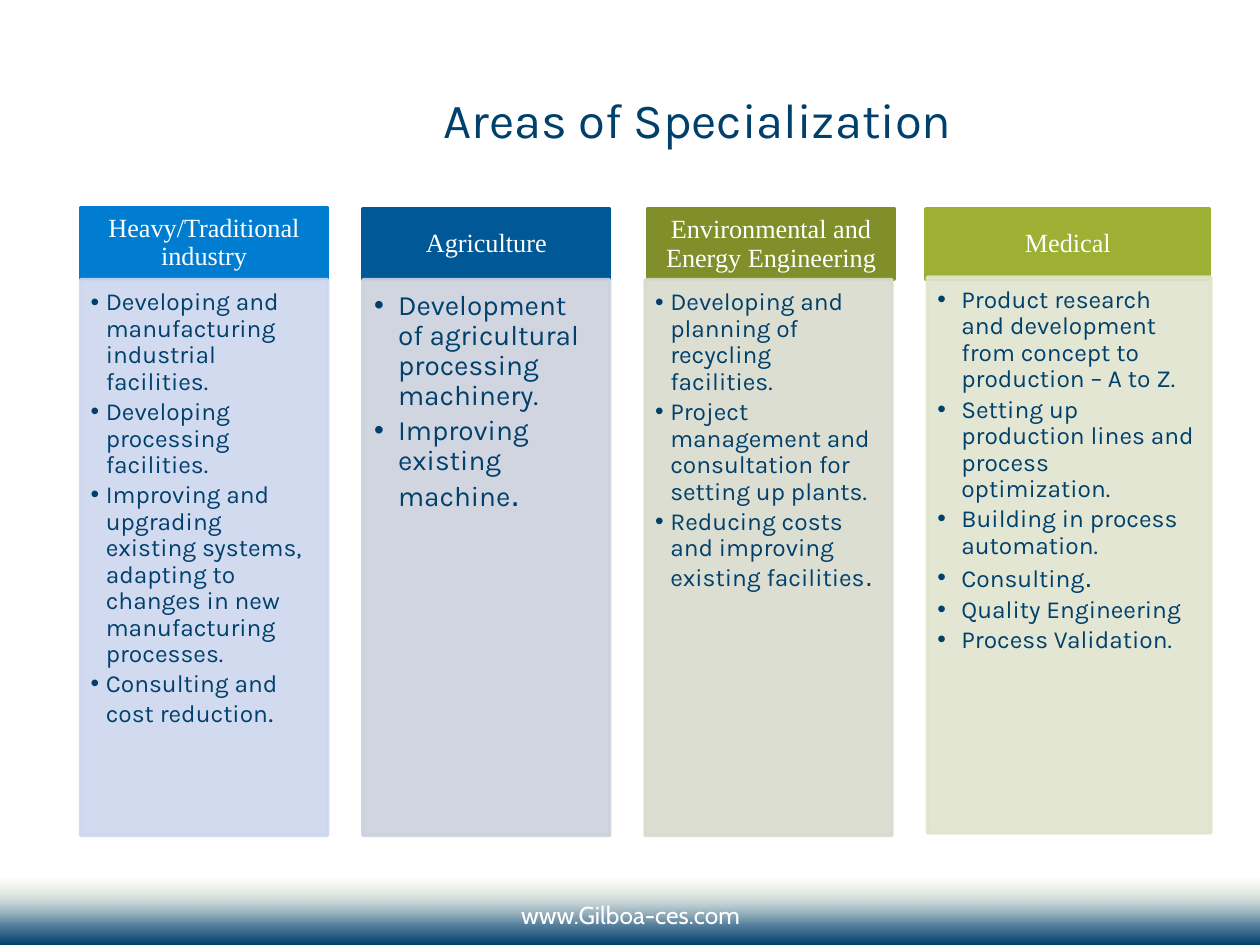
from pptx import Presentation
from pptx.dml.color import RGBColor
from pptx.enum.shapes import MSO_SHAPE
from pptx.enum.text import MSO_ANCHOR, PP_ALIGN
from pptx.oxml import parse_xml
from pptx.oxml.ns import nsdecls, qn
from pptx.util import Inches, Pt
from lxml.etree import SubElement

COLORS = {
    "navy": "00406C", "white": "FFFFFF", "footer": "00406D", "haze": "CBD5AF",
    "blue": "007CD0", "blue_tint": "CCD7EE",
    "deep": "005996", "deep_tint": "CCD1DD",
    "olive": "808F29", "olive_tint": "D8DBCD",
    "lime": "9DB033", "lime_tint": "DFE4CE",
}

# title, colour, header left and top, body left and top, width, text size, indent, bullets, final stop (size, font)
COLUMNS = [
    ("Medical", "lime", (7.35, 1.66), (7.36, 2.2), 2.25, 14, 0.19, [
        "Product research and development from concept to production – A to Z.",
        "Setting up production lines and process optimization.",
        "Building in process automation.",
        ("Consulting", 16, "Arial"),
        "Quality Engineering",
        "Process Validation."]),
    ("Environmental and Energy Engineering", "olive", (5.14, 1.66), (5.12, 2.22), 1.96, 14, 0.12, [
        "Developing and planning of recycling facilities.",
        "Project management and consultation for setting up plants.",
        ("Reducing costs and improving existing facilities", 16, "Arial")]),
    ("Agriculture", "deep", (2.88, 1.66), (2.88, 2.22), 1.96, 16, 0.19, [
        "Development of agricultural processing machinery.",
        ("Improving existing machine", 20, "Arial")]),
    ("Heavy/Traditional industry", "blue", (0.64, 1.65), (0.64, 2.22), 1.96, 14, 0.12, [
        "Developing and manufacturing industrial facilities.",
        "Developing processing facilities.",
        "Improving and upgrading existing systems, adapting to changes in new manufacturing processes.",
        ("Consulting and cost reduction", 16, "Karla")]),
]


def rgb(name):
    return RGBColor.from_string(COLORS[name])


def add_run(p, text, size=14, font="Karla", color="navy"):
    r = p.add_run()
    r.text = text
    r.font.size = Pt(size)
    r.font.name = font
    r.font.color.rgb = rgb(color)


class Deck:
    def __init__(self, prs):
        self.s = prs.slides.add_slide(prs.slide_layouts[6])

    def frame(self, sp, anchor=MSO_ANCHOR.TOP, insets=(0.1, 0.05, 0.1, 0.05)):
        tf = sp.text_frame
        tf.word_wrap = True
        tf.vertical_anchor = anchor
        tf.margin_left, tf.margin_top, tf.margin_right, tf.margin_bottom = map(Inches, insets)
        return tf

    def text(self, at, text, anchor=MSO_ANCHOR.TOP, align=PP_ALIGN.LEFT, **fmt):
        tf = self.frame(self.s.shapes.add_textbox(*map(Inches, at)), anchor)
        p = tf.paragraphs[0]
        p.alignment = align
        add_run(p, text, **fmt)

    def rect(self, at, color, alpha=100):
        sp = self.s.shapes.add_shape(MSO_SHAPE.RECTANGLE, *map(Inches, at))
        sp.shadow.inherit = False
        sp.fill.solid()
        sp.fill.fore_color.rgb = rgb(color)
        sp.line.color.rgb = rgb(color)
        sp.line.width = Pt(2)
        if alpha < 100:
            for clr in sp._element.spPr.iter(qn("a:srgbClr")):
                SubElement(clr, qn("a:alpha")).set("val", str(alpha * 1000))
        return sp

    def footer_band(self, at, stops):
        sp = self.rect(at, "footer")
        sp.line.fill.background()
        gs = "".join(
            f'<a:gs pos="{pos * 1000}"><a:srgbClr val="{COLORS[color]}">'
            f'<a:alpha val="{alpha * 1000}"/></a:srgbClr></a:gs>'
            for pos, color, alpha in stops)
        grad = parse_xml(f'<a:gradFill {nsdecls("a")} rotWithShape="1"><a:gsLst>{gs}</a:gsLst>'
                         '<a:lin ang="5400000" scaled="0"/></a:gradFill>')
        spPr = sp._element.spPr
        spPr.replace(spPr.find(qn("a:solidFill")), grad)

    def header(self, at, title, color):
        tf = self.frame(self.rect(at, color), MSO_ANCHOR.MIDDLE, (0.12, 0.07, 0.12, 0.07))
        p = tf.paragraphs[0]
        p.alignment = PP_ALIGN.CENTER
        p.line_spacing = 0.9
        add_run(p, title, size=15, font="Times New Roman", color="white")

    def body(self, at, items, color, size, indent):
        insets = (0.09, 0.09, 0.12, 0.14) if size > 14 else (0.08, 0.08, 0.11, 0.12)
        tf = self.frame(self.rect(at, color, alpha=90), insets=insets)
        for i, item in enumerate(items):
            p = tf.add_paragraph() if i else tf.paragraphs[0]
            self.bullet(p, indent)
            p.alignment = PP_ALIGN.LEFT
            p.level = 1
            p.line_spacing = 0.9
            p.space_after = Pt(round(size * 0.15, 1))
            if isinstance(item, str):
                add_run(p, item, size=size)
            else:
                text, stop_size, stop_font = item
                add_run(p, text, size=size)
                add_run(p, ".", size=stop_size, font=stop_font)

    def bullet(self, p, indent):
        pPr = p._p.get_or_add_pPr()
        pPr.set("marL", str(Inches(indent)))
        pPr.set("indent", str(-Inches(indent)))
        SubElement(pPr, qn("a:buFont")).set("typeface", "Arial")
        SubElement(pPr, qn("a:buChar")).set("char", "•")


def main():
    prs = Presentation()
    prs.slide_width, prs.slide_height = Inches(10), Inches(7.5)
    deck = Deck(prs)
    deck.footer_band((0, 6.98, 10, 0.52),
                     [(0, "haze", 7), (69, "footer", 66), (100, "footer", 100)])
    deck.text((3.42, 0.24, 6.19, 0.99), "Areas of Specialization", MSO_ANCHOR.BOTTOM, size=28)
    deck.text((3.42, 7.09, 3.17, 0.26), "www.Gilboa-ces.com", align=PP_ALIGN.CENTER,
              font="Cabin", color="white")
    for title, color, head, body, width, size, indent, items in COLUMNS:
        deck.header((*head, width, 0.56), title, color)
        deck.body((*body, width, 4.41), items, color + "_tint", size, indent)
    prs.save("out.pptx")


if __name__ == "__main__":
    main()
